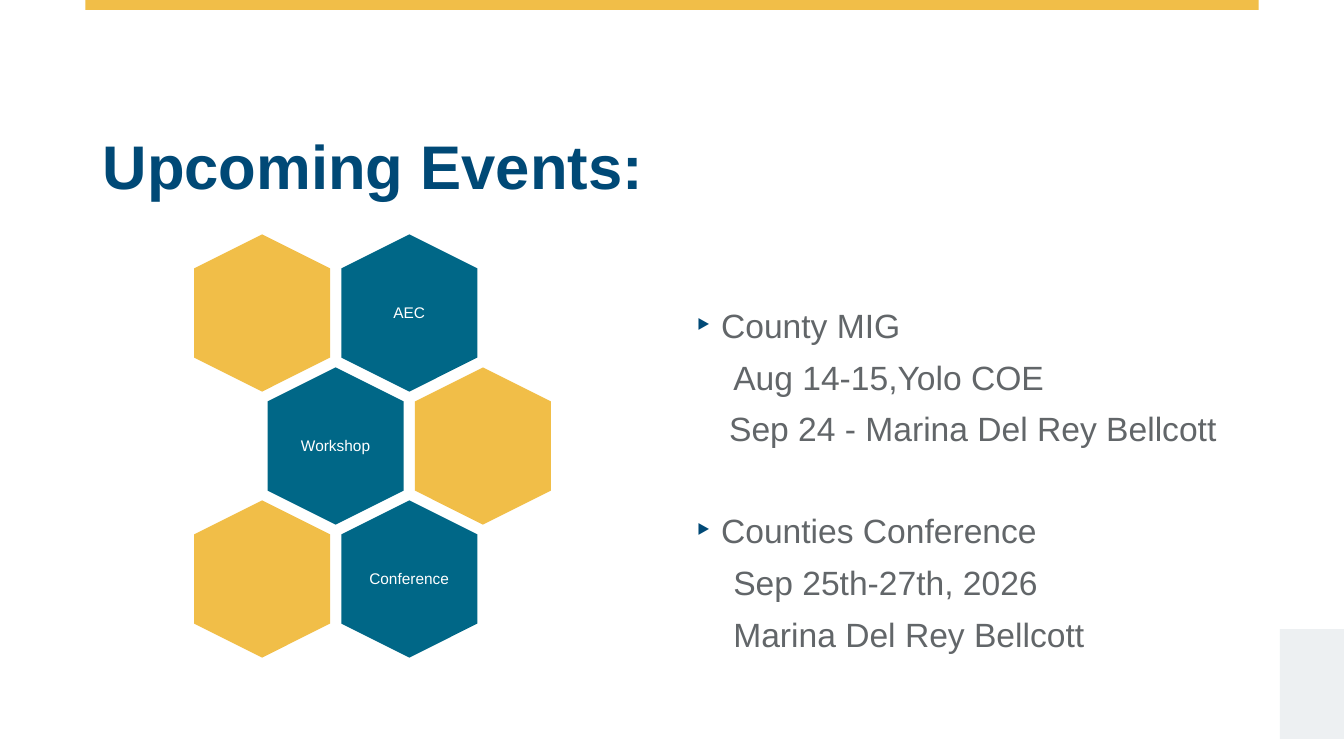
from dataclasses import dataclass

from lxml.etree import SubElement
from pptx import Presentation
from pptx.dml.color import RGBColor
from pptx.enum.shapes import MSO_SHAPE
from pptx.enum.text import MSO_ANCHOR, PP_ALIGN
from pptx.oxml.ns import qn
from pptx.util import Pt

NAVY = RGBColor(0x00, 0x49, 0x76)
TEAL = RGBColor(0x00, 0x67, 0x87)
GOLD = RGBColor(0xF1, 0xBE, 0x48)
PALE = RGBColor(0xED, 0xF0, 0xF2)
GREY = RGBColor(0x62, 0x66, 0x69)
WHITE = RGBColor(0xFF, 0xFF, 0xFF)

# Honeycomb: neighbouring hexagons are two half-steps apart
HEX_LEFT, HEX_TOP = 131, 175
HEX_W, HEX_H = 112.3, 97.2
HALF_STEP, ROW_STEP = 52.6, 95
LABEL_W, LABEL_H = 67, 77


@dataclass
class Hexagon:
    half_col: int
    row: int
    fill: RGBColor
    label: str = ""


@dataclass
class Line:
    text: str
    indent: float
    before: float = 11
    bullet: bool = False
    align: PP_ALIGN = PP_ALIGN.LEFT


HEXAGONS = [
    Hexagon(2, 0, TEAL, "AEC"),
    Hexagon(0, 0, GOLD),
    Hexagon(1, 1, TEAL, "Workshop"),
    Hexagon(3, 1, GOLD),
    Hexagon(2, 2, TEAL, "Conference"),
    Hexagon(0, 2, GOLD),
]

LINES = [
    Line("County MIG", 18, before=0, bullet=True),
    Line("Aug 14-15,Yolo COE", 26.7),
    Line("Sep 24 - Marina Del Rey Bellcott", 6.7, align=PP_ALIGN.CENTER),
    Line("Counties Conference", 18, before=47, bullet=True),
    Line("Sep 25th-27th, 2026", 26.7),
    Line("Marina Del Rey Bellcott", 26.7),
]


def add_filled(s, kind: MSO_SHAPE, box: tuple, fill: RGBColor):
    sp = s.shapes.add_shape(kind, *map(Pt, box))
    sp.shadow.inherit = False
    sp.fill.solid()
    sp.fill.fore_color.rgb = fill
    sp.line.fill.background()
    return sp


def add_text(s, box: tuple, insets: tuple, anchor: MSO_ANCHOR):
    tf = s.shapes.add_textbox(*map(Pt, box)).text_frame
    left, top, right, bottom = map(Pt, insets)
    frame_format = {
        "word_wrap": True, "vertical_anchor": anchor,
        "margin_left": left, "margin_top": top,
        "margin_right": right, "margin_bottom": bottom,
    }
    for name, value in frame_format.items():
        setattr(tf, name, value)
    return tf


def write(p, text: str, size: float, color: RGBColor, spacing: float,
          align: PP_ALIGN = PP_ALIGN.LEFT, bold: bool = False) -> None:
    p.alignment = align
    p.line_spacing = spacing
    r = p.add_run()
    r.text = text
    font_format = {"name": "Arial", "size": Pt(size), "bold": bold}
    for name, value in font_format.items():
        setattr(r.font, name, value)
    r.font.color.rgb = color


def set_indent(p, line: Line) -> None:
    p.space_before = Pt(line.before)
    pPr = p._p.get_or_add_pPr()
    pPr.set("marL", str(Pt(line.indent)))
    pPr.set("indent", str(Pt(-line.indent if line.bullet else 0)))
    if line.bullet:
        color = SubElement(pPr, qn("a:buClr"))
        SubElement(color, qn("a:srgbClr"), val=str(NAVY))
        SubElement(pPr, qn("a:buSzPct"), val="120000")
        SubElement(pPr, qn("a:buFont"), typeface="Arial")
        SubElement(pPr, qn("a:buChar"), char="‣")
    else:
        SubElement(pPr, qn("a:buNone"))


def add_hexagon(s, item: Hexagon) -> None:
    x = HEX_LEFT + item.half_col * HALF_STEP
    y = HEX_TOP + item.row * ROW_STEP
    sp = add_filled(s, MSO_SHAPE.HEXAGON, (x, y, HEX_W, HEX_H), item.fill)
    sp.adjustments[0] = 0.25
    sp.rotation = 90
    if item.label:
        box = (x + (HEX_W - LABEL_W) / 2, y + (HEX_H - LABEL_H) / 2, LABEL_W, LABEL_H)
        tf = add_text(s, box, (3.6, 3.6, 3.6, 3.6), MSO_ANCHOR.MIDDLE)
        write(tf.paragraphs[0], item.label, 11, WHITE, 0.9, PP_ALIGN.CENTER)


def main() -> None:
    prs = Presentation()
    prs.slide_width, prs.slide_height = Pt(960), Pt(540)
    s = prs.slides.add_slide(prs.slide_layouts[6])

    # Top band and corner block
    add_filled(s, MSO_SHAPE.RECTANGLE, (61, 0, 838, 7), GOLD)
    add_filled(s, MSO_SHAPE.RECTANGLE, (914.3, 449.4, 45.7, 78.4), PALE)

    # Title
    tf = add_text(s, (66.2, 28.8, 828, 122.4), (7.2, 0, 7.2, 7.2), MSO_ANCHOR.BOTTOM)
    write(tf.paragraphs[0], "Upcoming Events:", 44, NAVY, 0.8, bold=True)

    # Honeycomb
    for item in HEXAGONS:
        add_hexagon(s, item)

    # Event list
    tf = add_text(s, (490, 221, 403.2, 265.7), (7.2, 0, 7.2, 7.2), MSO_ANCHOR.TOP)
    for i, line in enumerate(LINES):
        p = tf.add_paragraph() if i else tf.paragraphs[0]
        write(p, line.text, 24, GREY, 0.9, line.align)
        set_indent(p, line)

    prs.save("out.pptx")


if __name__ == "__main__":
    main()
